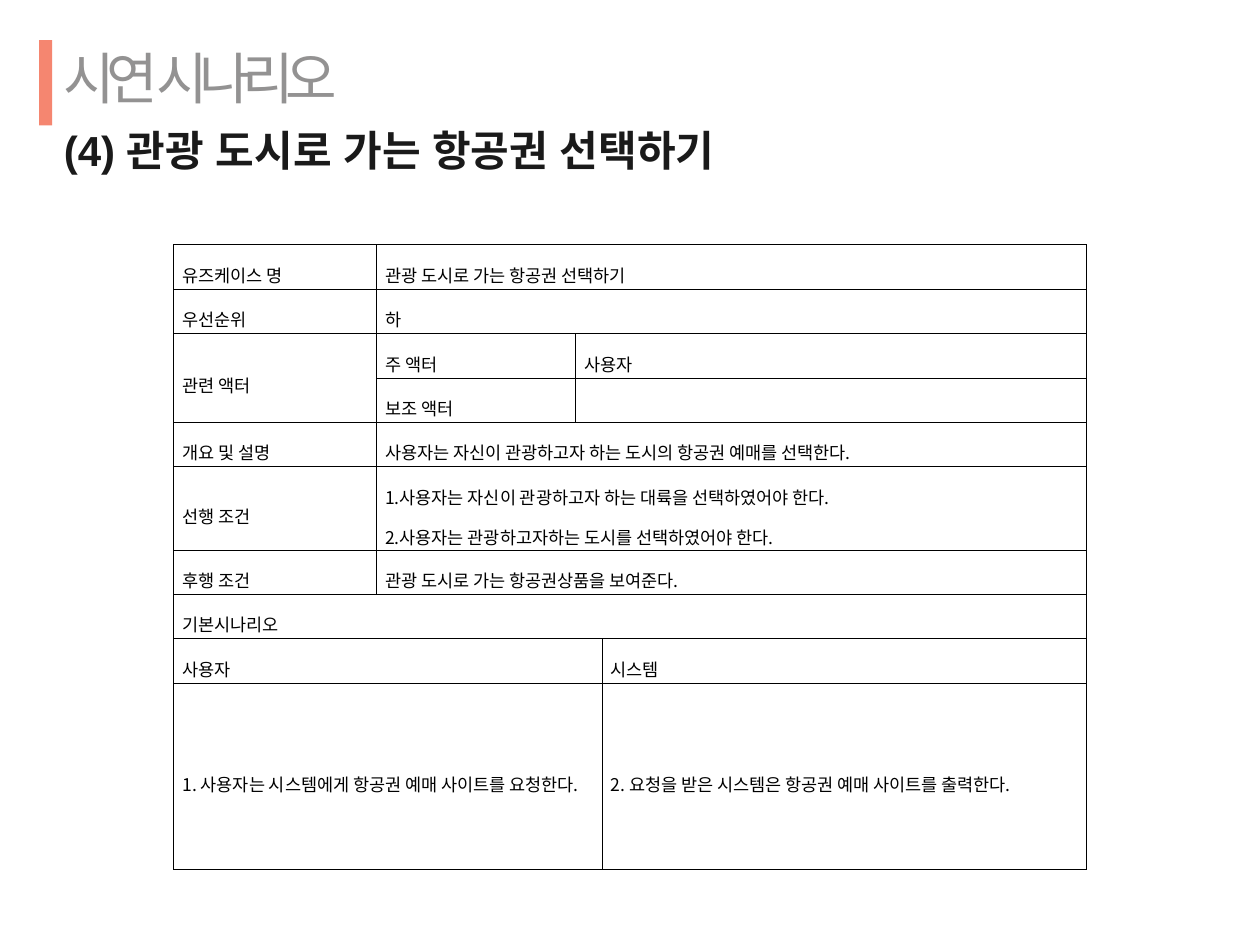
from lxml.etree import SubElement
from pptx import Presentation
from pptx.dml.color import RGBColor
from pptx.enum.shapes import MSO_SHAPE
from pptx.enum.text import MSO_ANCHOR, MSO_AUTO_SIZE, PP_ALIGN
from pptx.oxml import parse_xml
from pptx.oxml.ns import qn
from pptx.util import Pt

COLORS = {"accent": "F58670", "title": "939292", "subtitle": "1A1A1A", "ink": "000000"}
TITLE_FONT = "Arial"
TABLE_FONT = "Noto Sans CJK KR"
DRAWING_NS = "http://schemas.openxmlformats.org/drawingml/2006/main"

COLUMN_WIDTHS = [115.9, 113.8, 15.1, 276.5]
ROW_HEIGHTS = [25.4] * 5 + [47.5] + [25.4] * 3 + [106.6]

# Row, column, rows spanned, columns spanned, paragraphs
CELLS = [
    (0, 0, 1, 1, ["유즈케이스 명"]),
    (0, 1, 1, 3, ["관광 도시로 가는 항공권 선택하기"]),
    (1, 0, 1, 1, ["우선순위"]),
    (1, 1, 1, 3, ["하"]),
    (2, 0, 2, 1, ["관련 액터"]),
    (2, 1, 1, 1, ["주 액터"]),
    (2, 2, 1, 2, ["사용자"]),
    (3, 1, 1, 1, ["보조 액터"]),
    (3, 2, 1, 2, []),
    (4, 0, 1, 1, ["개요 및 설명"]),
    (4, 1, 1, 3, ["사용자는 자신이 관광하고자 하는 도시의 항공권 예매를 선택한다."]),
    (5, 0, 1, 1, ["선행 조건"]),
    (5, 1, 1, 3, ["1.사용자는 자신이 관광하고자 하는 대륙을 선택하였어야 한다.",
                  "2.사용자는 관광하고자하는 도시를 선택하였어야 한다."]),
    (6, 0, 1, 1, ["후행 조건"]),
    (6, 1, 1, 3, ["관광 도시로 가는 항공권상품을 보여준다."]),
    (7, 0, 1, 4, ["기본시나리오"]),
    (8, 0, 1, 3, ["사용자"]),
    (8, 3, 1, 1, ["시스템"]),
    (9, 0, 1, 3, ["1. 사용자는 시스템에게 항공권 예매 사이트를 요청한다."]),
    (9, 3, 1, 1, ["2. 요청을 받은 시스템은 항공권 예매 사이트를 출력한다."]),
]


def add_span(para, text, font, size, color, bold=False):
    span = para.add_run()
    span.text = text
    span.font.name = font
    span.font.size = Pt(size)
    span.font.bold = bold
    span.font.color.rgb = RGBColor.from_string(COLORS[color])
    SubElement(span.font._element, qn("a:ea")).set("typeface", font)
    return span


def set_borders(cell, width=0.28):
    properties = cell._tc.get_or_add_tcPr()
    for index, side in enumerate(("lnL", "lnR", "lnT", "lnB")):
        properties.insert(index, parse_xml(
            f'<a:{side} xmlns:a="{DRAWING_NS}" w="{Pt(width)}"><a:solidFill>'
            f'<a:srgbClr val="{COLORS["ink"]}"/></a:solidFill></a:{side}>'))


def add_accent_bar(page, left, top, width, height):
    bar = page.shapes.add_shape(
        MSO_SHAPE.RECTANGLE, Pt(left), Pt(top), Pt(width), Pt(height))
    bar.shadow.inherit = False
    bar.fill.solid()
    bar.fill.fore_color.rgb = RGBColor.from_string(COLORS["accent"])
    bar.line.fill.background()


def add_heading(page, left, top, width, height):
    box = page.shapes.add_textbox(Pt(left), Pt(top), Pt(width), Pt(height))
    frame = box.text_frame
    frame.word_wrap = True
    frame.auto_size = MSO_AUTO_SIZE.SHAPE_TO_FIT_TEXT
    frame.margin_left = frame.margin_right = frame.margin_top = frame.margin_bottom = 0
    title, subtitle = frame.paragraphs[0], frame.add_paragraph()
    for para in (title, subtitle):
        para.line_spacing = Pt(37)
        para._p.get_or_add_pPr().set("marL", str(Pt(0.9)))
    span = add_span(title, "시연 시나리오", TITLE_FONT, 32, "title")
    span.font._element.set("spc", "-500")  # tight letter spacing
    add_span(subtitle, "(4) 관광 도시로 가는 항공권 선택하기", TITLE_FONT, 24, "subtitle", True)


def add_use_case_table(page, left, top, width, height):
    table = page.shapes.add_table(
        len(ROW_HEIGHTS), len(COLUMN_WIDTHS),
        Pt(left), Pt(top), Pt(width), Pt(height)).table
    table.first_row = table.horz_banding = False
    for column, column_width in zip(table.columns, COLUMN_WIDTHS):
        column.width = Pt(column_width)
    for row, row_height in zip(table.rows, ROW_HEIGHTS):
        row.height = Pt(row_height)

    # Shared cell look
    for cell in table.iter_cells():
        cell.fill.background()
        cell.vertical_anchor = MSO_ANCHOR.MIDDLE
        cell.margin_left = cell.margin_right = Pt(5.1)
        cell.margin_top = cell.margin_bottom = Pt(1.4)
        set_borders(cell)

    # Merges and wording
    for row, column, row_span, column_span, lines in CELLS:
        cell = table.cell(row, column)
        if row_span * column_span > 1:
            cell.merge(table.cell(row + row_span - 1, column + column_span - 1))
        frame = cell.text_frame
        for index, line in enumerate(lines):
            para = frame.add_paragraph() if index else frame.paragraphs[0]
            para.alignment = PP_ALIGN.JUSTIFY
            para.line_spacing = 1.6
            add_span(para, line, TABLE_FONT, 10, "ink")


def main():
    deck = Presentation()
    deck.slide_width, deck.slide_height = Pt(720), Pt(540)
    page = deck.slides.add_slide(deck.slide_layouts[6])
    add_accent_bar(page, 22.4, 23, 7.4, 48.7)
    add_heading(page, 35.6, 26, 473, 149.8)
    add_use_case_table(page, 99.2, 139.7, sum(COLUMN_WIDTHS), sum(ROW_HEIGHTS))
    deck.save("out.pptx")


if __name__ == "__main__":
    main()
